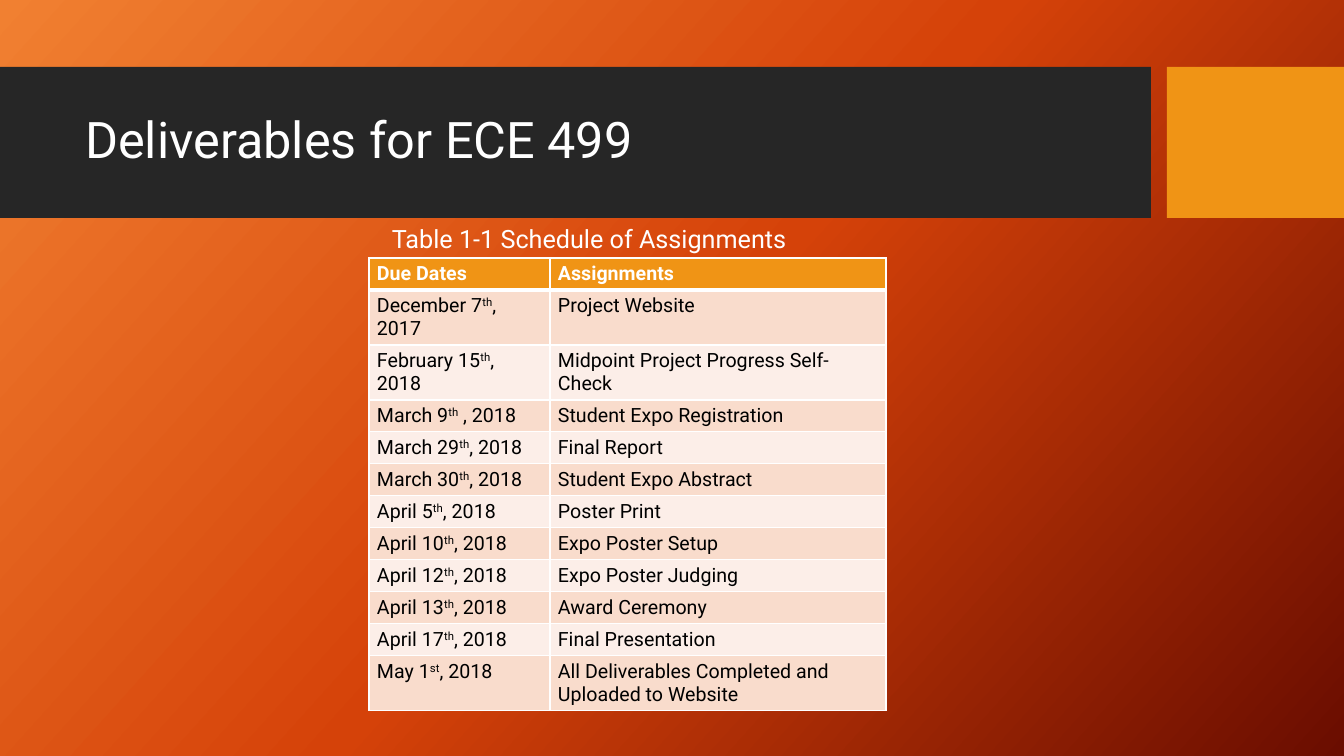
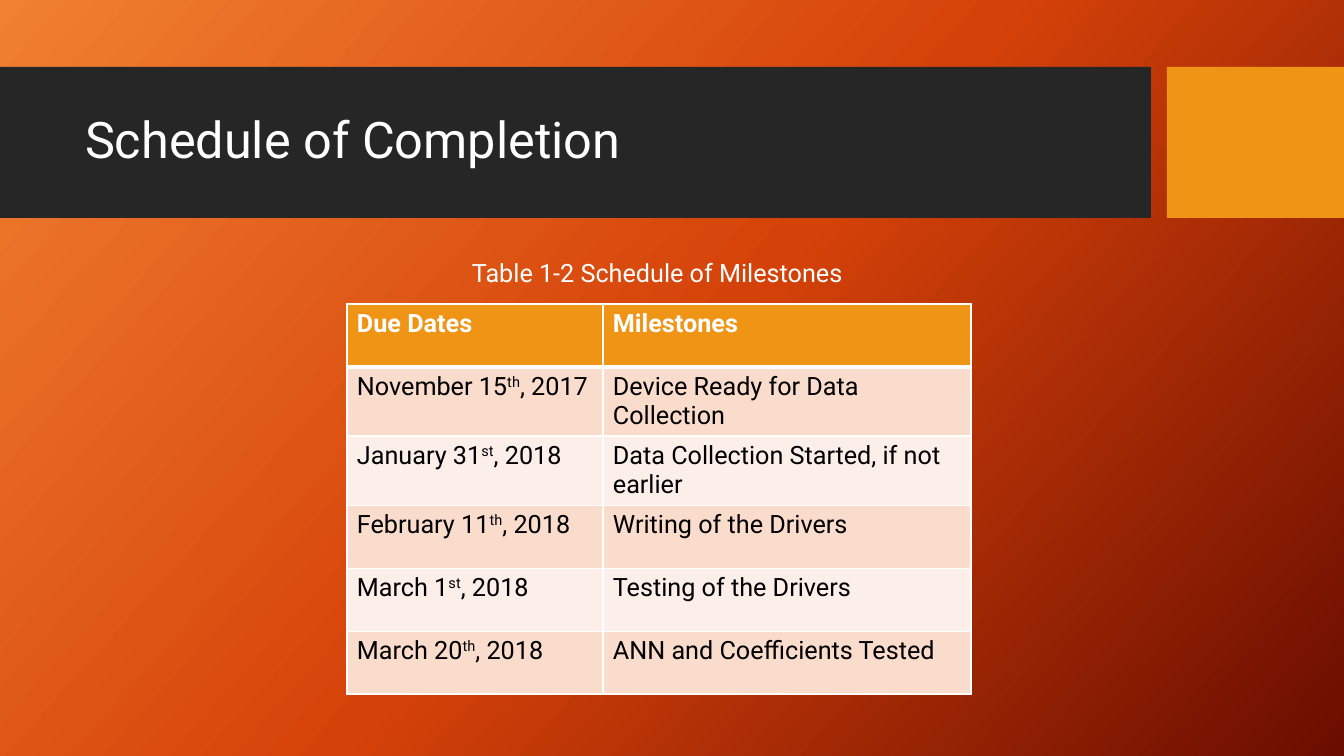
from copy import deepcopy
from dataclasses import dataclass

from lxml import etree
from pptx import Presentation
from pptx import util as u
from pptx.dml.color import RGBColor
from pptx.enum import shapes, text
from pptx.oxml import ns

SLIDE_WIDTH, SLIDE_HEIGHT = 1344, 756
TITLE_ONLY = 5


@dataclass(frozen=True)
class Theme:
    font: str = "Roboto"
    gradient: tuple = ("F18031", "D54209", "6A0D00")
    gradient_angle: int = 42
    band: str = "262626"
    accent: str = "F09415"
    stripes: tuple = ("F9DCCC", "FCEEE8")
    light: str = "FFFFFF"
    dark: str = "000000"
    title_size: int = 36
    caption_size: int = 18
    border: int = 1
    header_border: int = 3


THEME = Theme()

ASSIGNMENTS = [
    ("Due Dates", "Assignments"),
    ("December 7^th^, 2017", "Project Website"),
    ("February 15^th^, 2018", "Midpoint Project Progress Self-Check"),
    ("March 9^th^ , 2018", "Student Expo Registration"),
    ("March 29^th^, 2018", "Final Report"),
    ("March 30^th^, 2018", "Student Expo Abstract"),
    ("April 5^th^, 2018", "Poster Print"),
    ("April 10^th^, 2018", "Expo Poster Setup"),
    ("April 12^th^, 2018", "Expo Poster Judging"),
    ("April 13^th^, 2018", "Award Ceremony"),
    ("April 17^th^, 2018", "Final Presentation"),
    ("May 1^st^, 2018", "All Deliverables Completed and Uploaded to Website"),
]

MILESTONES = [
    ("Due Dates", "Milestones"),
    ("November 15^th^, 2017", "Device Ready for Data Collection"),
    ("January 31^st^, 2018", "Data Collection Started, if not earlier"),
    ("February 11^th^, 2018", "Writing of the Drivers"),
    ("March 1^st^, 2018", "Testing of the Drivers"),
    ("March 20^th^, 2018", "ANN and Coefficients Tested"),
]


def px(length):
    """Turn slide pixels (100.8 to the inch) into EMU."""
    return u.Emu(round(length * 914400 / 100.8))


def rgb(color):
    return RGBColor.from_string(color)


def style_run(run, size, color, bold=False):
    run.font.name = THEME.font
    run.font.size = u.Pt(size)
    run.font.bold = bold
    run.font.color.rgb = rgb(color)


# Shared look: background and bands live in the layout
def style_layout(layout):
    fill = layout.background.fill
    fill.gradient()
    fill.gradient_angle = 360 - THEME.gradient_angle
    stop_list = next(layout._element.iter(ns.qn("a:gsLst")))
    stop_list.insert(1, deepcopy(stop_list[0]))
    for index, (stop, color) in enumerate(zip(fill.gradient_stops, THEME.gradient)):
        stop.position = index / 2
        stop.color.rgb = rgb(color)


def add_layout_band(slide, left, width, color):
    band = slide.shapes.add_shape(
        shapes.MSO_SHAPE.RECTANGLE, px(left), px(67), px(width), px(151))
    band.shadow.inherit = False
    band.fill.solid()
    band.fill.fore_color.rgb = rgb(color)
    band.line.fill.background()
    # Index 2 lies behind every placeholder of the layout
    slide.slide_layout.shapes._spTree.insert(2, band._element)


# Title and caption
def add_titled_slide(presentation, title_text):
    slide = presentation.slides.add_slide(presentation.slide_layouts[TITLE_ONLY])
    title = slide.shapes.title
    title.left, title.top, title.width, title.height = map(px, (75, 83, 1059, 119))
    title.text_frame.text = title_text
    title.text_frame.vertical_anchor = text.MSO_ANCHOR.MIDDLE
    paragraph = title.text_frame.paragraphs[0]
    paragraph.alignment = text.PP_ALIGN.LEFT
    paragraph.line_spacing = 0.9
    style_run(paragraph.runs[0], THEME.title_size, THEME.light)
    return slide


def add_caption(slide, caption_text, left, top, width):
    caption = slide.shapes.add_textbox(px(left), px(top), px(width), px(40))
    caption.text_frame.word_wrap = True
    caption.text_frame.text = caption_text
    style_run(caption.text_frame.paragraphs[0].runs[0],
              THEME.caption_size, THEME.light)


# Schedule table
def set_borders(cell, top, bottom):
    widths = {"lnL": THEME.border, "lnR": THEME.border, "lnT": top, "lnB": bottom}
    properties = cell._tc.get_or_add_tcPr()
    for index, (side, width) in enumerate(widths.items()):
        line = etree.Element(ns.qn(f"a:{side}"), w=str(u.Pt(width)))
        fill = etree.SubElement(line, ns.qn("a:solidFill"))
        etree.SubElement(fill, ns.qn("a:srgbClr"), val=THEME.light)
        properties.insert(index, line)


def fill_cell(cell, content, row_index, size, padding):
    header = row_index == 0
    cell.margin_left = cell.margin_right = px(padding)
    cell.margin_top = cell.margin_bottom = px(padding / 2)
    cell.fill.solid()
    cell.fill.fore_color.rgb = rgb(
        THEME.accent if header else THEME.stripes[(row_index - 1) % 2])
    set_borders(cell,
                top=THEME.header_border if row_index == 1 else THEME.border,
                bottom=THEME.header_border if header else THEME.border)
    # Text between carets is superscript
    paragraph = cell.text_frame.paragraphs[0]
    for index, part in enumerate(content.split("^")):
        run = paragraph.add_run()
        run.text = part
        style_run(run, size, THEME.light if header else THEME.dark, bold=header)
        if index % 2:
            run.font._element.set("baseline", "30000")


def add_schedule(slide, rows, left, top, column_widths, row_heights, size, padding):
    table = slide.shapes.add_table(
        len(rows), len(column_widths), px(left), px(top),
        px(sum(column_widths)), px(sum(row_heights))).table
    table.horz_banding = False
    for column, width in zip(table.columns, column_widths):
        column.width = px(width)
    for row_index, (row, height) in enumerate(zip(table.rows, row_heights)):
        row.height = px(height)
        for cell, content in zip(row.cells, rows[row_index]):
            fill_cell(cell, content, row_index, size, padding)


def main():
    presentation = Presentation()
    presentation.slide_width = px(SLIDE_WIDTH)
    presentation.slide_height = px(SLIDE_HEIGHT)
    style_layout(presentation.slide_layouts[TITLE_ONLY])

    # Deliverables
    slide = add_titled_slide(presentation, "Deliverables for ECE 499")
    add_layout_band(slide, 0, 1151, THEME.band)
    add_layout_band(slide, 1167, SLIDE_WIDTH - 1167, THEME.accent)
    two_line_rows = (1, 2, len(ASSIGNMENTS) - 1)
    heights = [55 if index in two_line_rows else 32
               for index in range(len(ASSIGNMENTS))]
    add_schedule(slide, ASSIGNMENTS, 369, 258, (181, 336), heights,
                 size=14, padding=8)
    add_caption(slide, "Table 1-1 Schedule of Assignments", 382, 218, 491)

    # Milestones
    slide = add_titled_slide(presentation, "Schedule of Completion")
    add_schedule(slide, MILESTONES, 347, 304, (256, 368), [63] * len(MILESTONES),
                 size=18, padding=10)
    add_caption(slide, "Table 1-2 Schedule of Milestones", 462, 252, 393)

    presentation.save("out.pptx")


if __name__ == "__main__":
    main()
